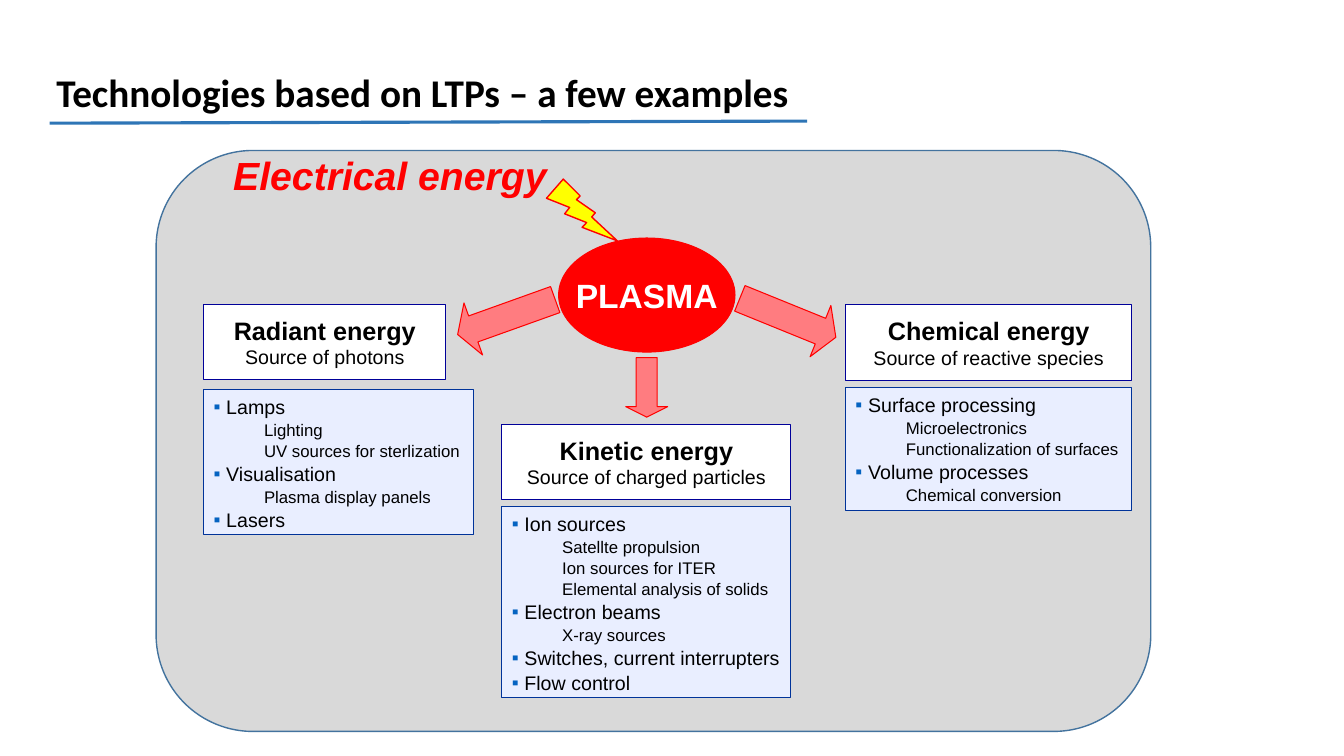
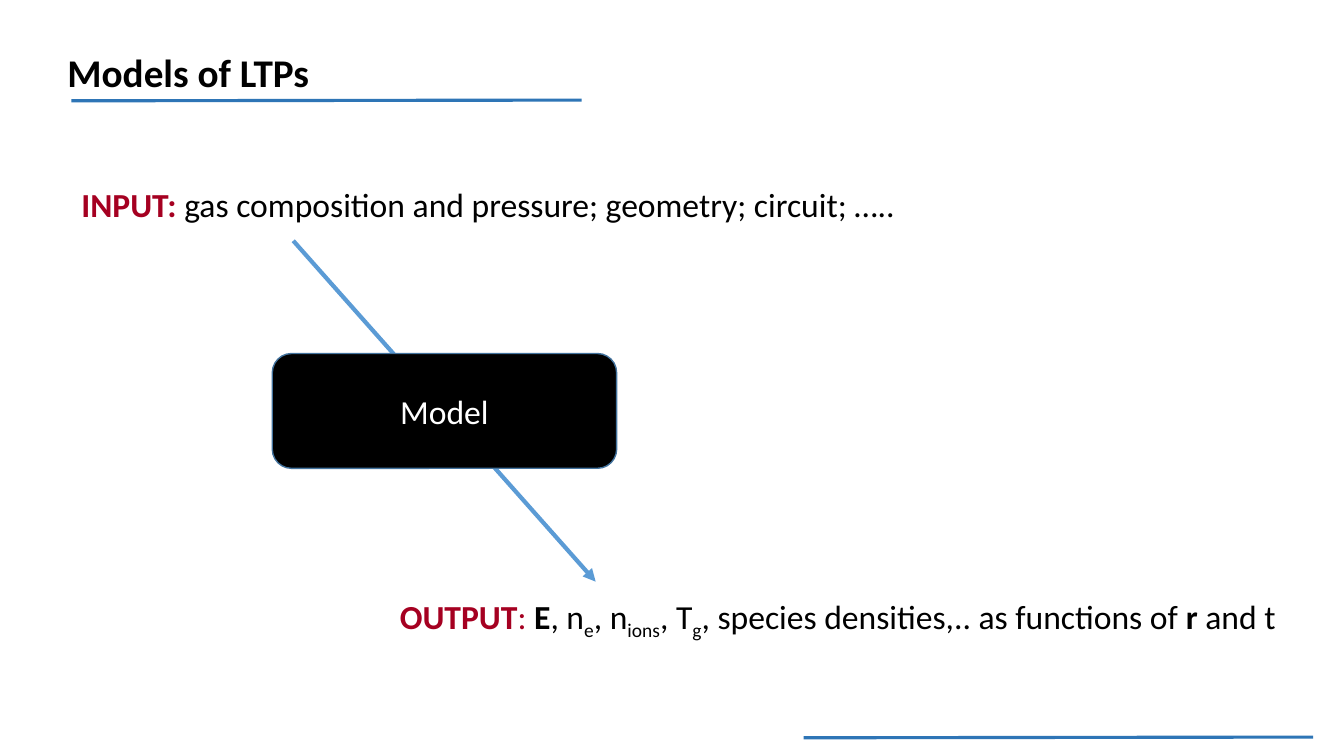
from dataclasses import dataclass
from typing import NamedTuple

from lxml.etree import SubElement as sub
from pptx import Presentation
from pptx.dml.color import RGBColor as Rgb
from pptx.enum.shapes import MSO_CONNECTOR as Conn, MSO_SHAPE as Kind
from pptx.enum.text import MSO_ANCHOR as Anchor, MSO_AUTO_SIZE as Fit, PP_ALIGN as Align
from pptx.oxml.ns import qn
from pptx.util import Pt


# Theme: colours, fonts and type sizes
@dataclass(frozen=True)
class Theme:
    black: str = "000000"
    white: str = "FFFFFF"
    grey: str = "D9D9D9"
    red: str = "FF0000"
    pink: str = "FF7C80"
    yellow: str = "FFFF00"
    pale: str = "E9EEFF"
    navy: str = "000099"
    blue: str = "003399"
    bullet: str = "0563C1"
    rule: str = "2E75B6"
    edge: str = "43739E"
    flow: str = "5B9BD5"
    wine: str = "A50021"
    sans: str = "Arial"
    body: str = "Calibri"
    title: int = 28
    large: int = 24
    head: int = 18
    item: int = 14
    small: int = 12


T = Theme()


class Box(NamedTuple):
    x: float
    y: float
    w: float
    h: float

    def pts(self) -> list:
        return [Pt(v) for v in self]


class Run(NamedTuple):
    text: str
    color: str = T.black
    bold: bool = False
    low: bool = False


class Arrow(NamedTuple):
    box: Box
    turn: float
    tip: float


class Card(NamedTuple):
    head: Box
    name: str
    source: str
    list: Box
    items: list


# Text helpers
def style(run, color: str, **form) -> None:
    for key, val in form.items():
        setattr(run.font, key, val)
    run.font.color.rgb = Rgb.from_string(color)


def write(para, text: str, color: str, size: int, name: str, **form):
    run = para.add_run()
    run.text = text
    style(run, color, size=Pt(size), name=name, **form)
    return run


def frame(shape, **form):
    base = {"word_wrap": True, "auto_size": Fit.NONE, "vertical_anchor": Anchor.MIDDLE}
    for key, val in (base | form).items():
        setattr(shape.text_frame, key, val)
    return shape.text_frame


def label(shape, text: str, color: str, size: int, name: str, **form) -> None:
    para = frame(shape, word_wrap=False).paragraphs[0]
    para.alignment = Align.CENTER
    write(para, text, color, size, name, **form)


def phrase(slide, box: Box, runs: list) -> None:
    para = frame(slide.shapes.add_textbox(*box.pts())).paragraphs[0]
    for part in runs:
        run = write(para, part.text, part.color, T.large, T.body, bold=part.bold)
        if part.low:
            run._r.get_or_add_rPr().set("baseline", "-25000")


# Drawing helpers
def draw(slide, kind: Kind, box: Box, fill: str, line: str, width: float = 0.75, turn: float = 0):
    shape = slide.shapes.add_shape(kind, *box.pts())
    shape.shadow.inherit = False
    shape.fill.solid()
    shape.fill.fore_color.rgb = Rgb.from_string(fill)
    shape.line.color.rgb = Rgb.from_string(line)
    shape.line.width = Pt(width)
    shape.rotation = turn
    return shape


def stroke(slide, ends: tuple, color: str = T.rule, width: float = 2.25, arrow: bool = False) -> None:
    line = slide.shapes.add_connector(Conn.STRAIGHT, *[Pt(v) for v in ends])
    line.line.color.rgb = Rgb.from_string(color)
    line.line.width = Pt(width)
    if arrow:
        sub(line.line._get_or_add_ln(), qn("a:tailEnd"), type="triangle")
    sub(line._element.spPr, qn("a:effectLst"))


def start(deck, text: str, box: Box, rule: tuple):
    """Add a slide with its title and the rule below it."""
    slide = deck.slides.add_slide(deck.slide_layouts[5])
    title = slide.shapes.title
    title.left, title.top, title.width, title.height = box.pts()
    para = frame(title, vertical_anchor=Anchor.TOP).paragraphs[0]
    para.alignment = Align.LEFT
    write(para, text, T.black, T.title, T.body, bold=True)
    stroke(slide, rule)
    return slide


def indent(para, top: bool) -> None:
    props = para._p.get_or_add_pPr()
    left, first = (Pt(9), -Pt(9)) if top else (Pt(36), 0)
    props.set("marL", str(left))
    props.set("indent", str(first))
    if top:
        sub(sub(props, qn("a:buClr")), qn("a:srgbClr"), val=T.bullet)
        sub(props, qn("a:buFont"), typeface=T.sans)
        sub(props, qn("a:buChar"), char="▪")


def card(slide, data: Card) -> None:
    # Heading box
    head = draw(slide, Kind.RECTANGLE, data.head, T.white, T.navy)
    label(head, data.name, T.black, T.head, T.sans, bold=True)
    para = head.text_frame.add_paragraph()
    para.alignment = Align.CENTER
    write(para, data.source, T.black, T.item, T.sans)
    # List box
    body = draw(slide, Kind.RECTANGLE, data.list, T.pale, T.blue)
    text = frame(body, vertical_anchor=Anchor.TOP, margin_right=0)
    for num, (top, item) in enumerate(data.items):
        para = text.add_paragraph() if num else text.paragraphs[0]
        para.alignment = Align.LEFT
        para.space_before = Pt(0.8 if num else 0)
        indent(para, top)
        write(para, item, T.black, T.item if top else T.small, T.sans)


CARDS = [
    Card(Box(145.5, 217.5, 173, 53.5), "Radiant energy", "Source of photons",
         Box(145.5, 278.5, 193, 103),
         [(True, "Lamps"), (False, "Lighting"), (False, "UV sources for sterlization"),
          (True, "Visualisation"), (False, "Plasma display panels"), (True, "Lasers")]),
    Card(Box(358.5, 303, 206.5, 54), "Kinetic energy", "Source of charged particles",
         Box(358.5, 362, 206.5, 136),
         [(True, "Ion sources"), (False, "Satellte propulsion"), (False, "Ion sources for ITER"),
          (False, "Elemental analysis of solids"), (True, "Electron beams"),
          (False, "X-ray sources"), (True, "Switches, current interrupters"),
          (True, "Flow control")]),
    Card(Box(604, 217.5, 204.5, 54), "Chemical energy", "Source of reactive species",
         Box(604, 277, 204.5, 88),
         [(True, "Surface processing"), (False, "Microelectronics"),
          (False, "Functionalization of surfaces"), (True, "Volume processes"),
          (False, "Chemical conversion")]),
]

ARROWS = [
    Arrow(Box(342, 189.5, 39.5, 74), 70.3, 0.3),
    Arrow(Box(447, 255.5, 30, 42.5), 0, 0.25),
    Arrow(Box(543, 190, 39.5, 74), 292.1, 0.3),
]

INPUT = [Run("INPUT: ", T.wine, True),
         Run("gas composition and pressure; geometry; circuit; …..")]

OUTPUT = [Run("OUTPUT", T.wine, True), Run(": ", T.wine), Run("E", bold=True),
          Run(", n"), Run("e", low=True), Run(", n"), Run("ions", low=True),
          Run(", T"), Run("g", low=True),
          Run(", species densities,.. as functions of "), Run("r ", bold=True), Run("and t")]


def uses(deck) -> None:
    slide = start(deck, "Technologies based on LTPs – a few examples",
                  Box(33, 45.5, 560, 41), (35.5, 88, 576.5, 86.5))
    draw(slide, Kind.ROUNDED_RECTANGLE, Box(111.5, 107.5, 710.5, 415), T.grey, T.edge, 1)
    # Energy source and plasma
    power = slide.shapes.add_textbox(*Box(163, 99.5, 231, 51).pts())
    label(power, "Electrical energy", T.red, T.title, T.sans, bold=True, italic=True)
    core = draw(slide, Kind.OVAL, Box(399, 170, 126, 81.5), T.red, T.red)
    label(core, "PLASMA", T.white, T.large, T.sans, bold=True)
    # Three kinds of energy
    for data in CARDS:
        card(slide, data)
    for box, turn, tip in ARROWS:
        arrow = draw(slide, Kind.DOWN_ARROW, box, T.pink, T.red, turn=turn)
        arrow.adjustments[1] = tip
    draw(slide, Kind.LIGHTNING_BOLT, Box(394.5, 125.5, 39.5, 53.5), T.yellow, T.red, 1, 343)


def models(deck) -> None:
    slide = start(deck, "Models of LTPs", Box(41, 31, 205, 41), (51, 72, 415.5, 71.5))
    # Flow from input through the model to output
    stroke(slide, (209.5, 172, 425.5, 415.5), T.flow, 3, arrow=True)
    phrase(slide, Box(51, 122.5, 624, 46), INPUT)
    phrase(slide, Box(278.5, 416, 665, 52), OUTPUT)
    model = draw(slide, Kind.ROUNDED_RECTANGLE, Box(194.5, 252.5, 246, 82), T.black, T.edge, 1)
    label(model, "Model", T.white, T.large, T.body)
    # Footer rule
    stroke(slide, (574, 527, 938, 526.5))


def main() -> None:
    deck = Presentation()
    deck.slide_width, deck.slide_height = Pt(960), Pt(540)
    uses(deck)
    models(deck)
    deck.save("out.pptx")


if __name__ == "__main__":
    main()
